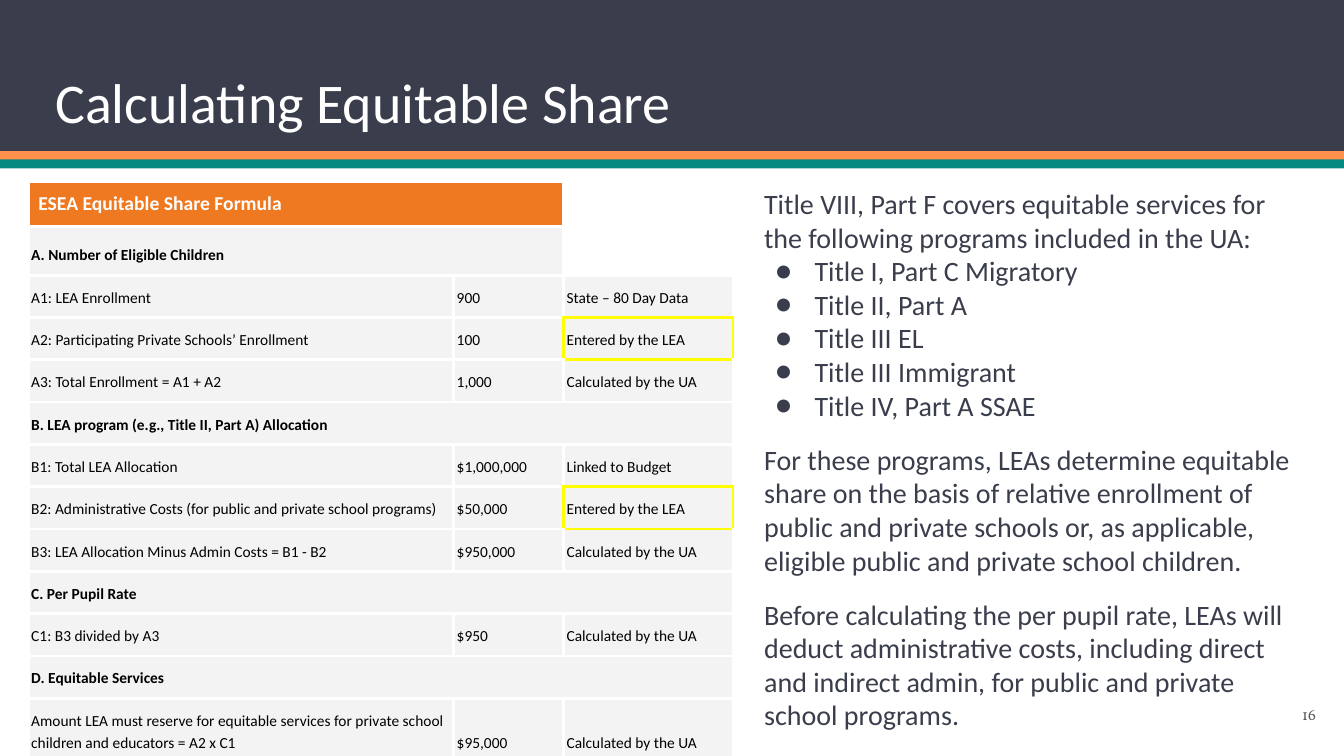
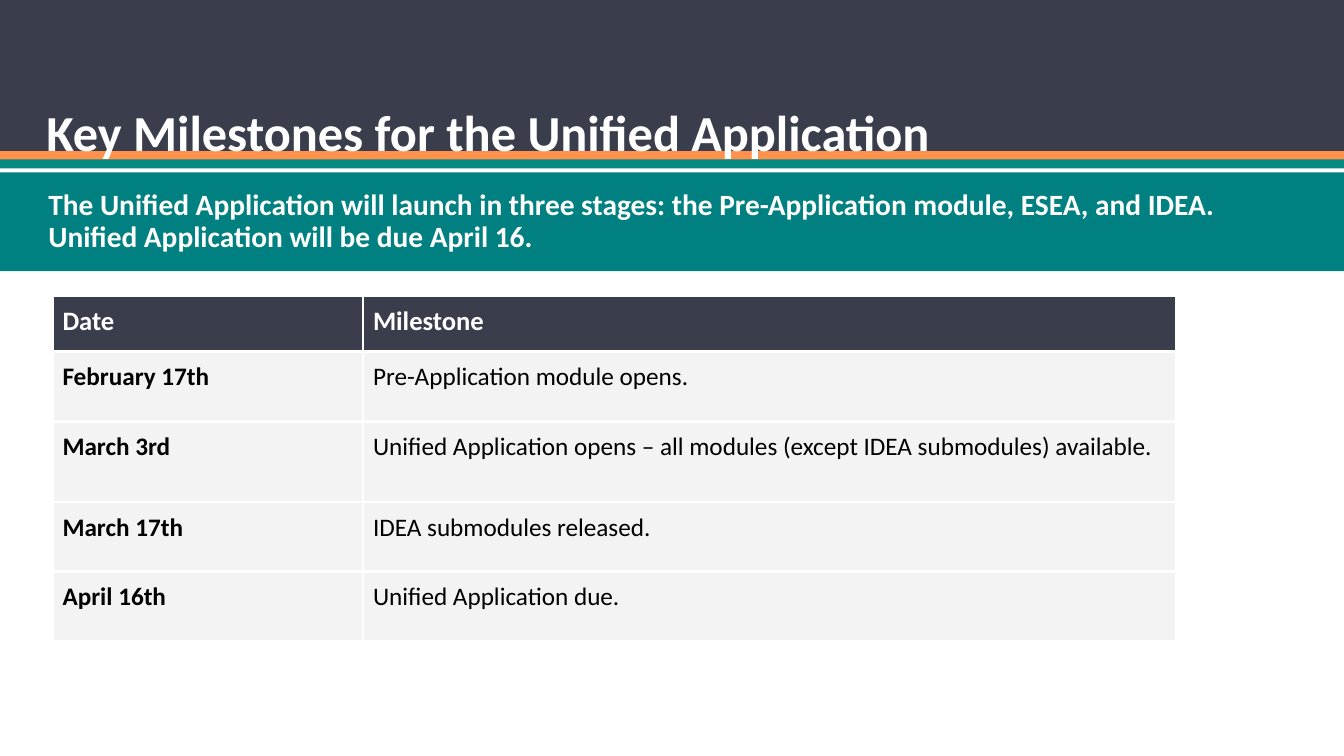
from dataclasses import dataclass

from lxml import etree
from pptx import Presentation
from pptx.dml.color import RGBColor
from pptx.enum import shapes, text
from pptx.oxml import ns
from pptx.util import Inches, Pt


@dataclass(frozen=True)
class Theme:
    font: str = "Calibri"
    number_font: str = "Vollkorn"
    white: str = "FFFFFF"
    black: str = "000000"
    navy: str = "3A3D4B"
    orange: str = "FF914D"
    green: str = "048A81"
    teal: str = "008080"
    header_orange: str = "EF7920"
    cell_gray: str = "F3F3F3"
    number_gray: str = "595959"
    yellow: str = "FFFF00"
    title: int = 40
    bold_title: int = 36
    banner: int = 21
    body: int = 20
    milestone_header: int = 19
    milestone: int = 18
    formula_header: int = 14
    formula: int = 11


THEME = Theme()
WIDTH, HEIGHT = 13.33, 7.5
# top, height, colour
BANDS = [(0, 1.5, THEME.navy), (1.5, 0.09, THEME.orange), (1.58, 0.09, THEME.green)]

ENTERED, CALCULATED = "Entered by the LEA", "Calculated by the UA"
FORMULA_TITLE = "ESEA Equitable Share Formula"
# A row with one text is a section heading.
FORMULA_ROWS = [
    ("A. Number of Eligible Children",),
    ("A1: LEA Enrollment", "900", "State – 80 Day Data"),
    ("A2: Participating Private Schools’ Enrollment", "100", ENTERED),
    ("A3: Total Enrollment = A1 + A2", "1,000", CALCULATED),
    ("B. LEA program (e.g., Title II, Part A) Allocation",),
    ("B1: Total LEA Allocation", "$1,000,000", "Linked to Budget"),
    ("B2: Administrative Costs (for public and private school programs)", "$50,000", ENTERED),
    ("B3: LEA Allocation Minus Admin Costs = B1 - B2", "$950,000", CALCULATED),
    ("C. Per Pupil Rate",),
    ("C1: B3 divided by A3", "$950", CALCULATED),
    ("D. Equitable Services",),
    ("Amount LEA must reserve for equitable services for private school "
     "children and educators = A2 x C1", "$95,000", CALCULATED),
]
PROGRAMS_INTRO = ("Title VIII, Part F covers equitable services for the following "
                  "programs included in the UA:")
PROGRAMS = ["Title I, Part C Migratory", "Title II, Part A", "Title III EL",
            "Title III Immigrant", "Title IV, Part A SSAE"]
EXPLANATIONS = [
    "For these programs, LEAs determine equitable share on the basis of relative enrollment "
    "of public and private schools or, as applicable, eligible public and private school children.",
    "Before calculating the per pupil rate, LEAs will deduct administrative costs, including "
    "direct and indirect admin, for public and private school programs.",
]
BANNER = ("The Unified Application will launch in three stages: the Pre-Application module, "
          "ESEA, and IDEA. Unified Application will be due April 16.")
MILESTONES = [
    ("Date", "Milestone"),
    ("February 17th", "Pre-Application module opens."),
    ("March 3rd", "Unified Application opens – all modules (except IDEA submodules) available."),
    ("March 17th", "IDEA submodules released."),
    ("April 16th", "Unified Application due."),
]


def set_all(target, **values):
    for name, value in values.items():
        setattr(target, name, value)


def set_margins(target, across, down):
    set_all(target, margin_left=Inches(across), margin_right=Inches(across),
            margin_top=Inches(down), margin_bottom=Inches(down))


def write(paragraph, words, size, color, bold=False, font=THEME.font, **layout):
    set_all(paragraph, **layout)
    run = paragraph.add_run()
    run.text = words
    set_all(run.font, size=Pt(size), bold=bold, name=font)
    run.font.color.rgb = RGBColor.from_string(color)


def add_box(slide, left, top, width, height, margin=0.1, anchor=text.MSO_ANCHOR.TOP):
    box = slide.shapes.add_textbox(*map(Inches, (left, top, width, height)))
    frame = box.text_frame
    set_all(frame, word_wrap=True, vertical_anchor=anchor)
    set_margins(frame, margin, margin)
    return frame


def add_band(slide, top, height, color):
    """Add a full-width rectangle."""
    band = slide.shapes.add_shape(shapes.MSO_SHAPE.RECTANGLE, 0, Inches(top),
                                  Inches(WIDTH), Inches(height))
    band.shadow.inherit = False
    band.fill.solid()
    band.fill.fore_color.rgb = RGBColor.from_string(color)
    band.line.fill.background()
    return band


def add_slide(presentation):
    slide = presentation.slides.add_slide(presentation.slide_layouts[6])
    for band in BANDS:
        add_band(slide, *band)
    return slide


def add_title(slide, words, left, top, size, spacing, margin=0.1, bold=False):
    frame = add_box(slide, left, top, 12.42, 0.83, margin)
    write(frame.paragraphs[0], words, size, THEME.white, bold, line_spacing=spacing)


def add_bullet(paragraph, indent, hanging):
    properties = paragraph._p.get_or_add_pPr()
    properties.set("marL", str(Inches(indent)))
    properties.set("indent", str(-Inches(hanging)))
    color = etree.SubElement(properties, ns.qn("a:buClr"))
    etree.SubElement(color, ns.qn("a:srgbClr"), val=THEME.navy)
    etree.SubElement(properties, ns.qn("a:buFont"), typeface=THEME.font)
    etree.SubElement(properties, ns.qn("a:buChar"), char="●")


def set_border(cell, position, side, color, width=2.25):
    """Insert one border line before the fill of the cell."""
    line = etree.Element(ns.qn("a:ln" + side), w=str(Pt(width)))
    fill = etree.SubElement(line, ns.qn("a:solidFill"))
    etree.SubElement(fill, ns.qn("a:srgbClr"), val=color)
    cell._tc.get_or_add_tcPr().insert(position, line)


def add_table(slide, left, top, widths, heights, header_fill, highlights=()):
    """Add a gray table with white rules and yellow boxes round the highlighted cells."""
    frame = slide.shapes.add_table(len(heights), len(widths), Inches(left), Inches(top),
                                   Inches(sum(widths)), Inches(sum(heights)))
    table = frame.table
    set_all(table, first_row=False, horz_banding=False)
    for column, width in zip(table.columns, widths):
        column.width = Inches(width)
    for row, height in zip(table.rows, heights):
        row.height = Inches(height)
    neighbours = {"L": (0, -1), "R": (0, 1), "T": (-1, 0), "B": (1, 0)}
    for r in range(len(heights)):
        for c in range(len(widths)):
            cell = table.cell(r, c)
            cell.fill.solid()
            cell.fill.fore_color.rgb = RGBColor.from_string(
                THEME.cell_gray if r else header_fill)
            for position, (side, (down, across)) in enumerate(neighbours.items()):
                boxed = {(r, c), (r + down, c + across)} & set(highlights)
                set_border(cell, position, side, THEME.yellow if boxed else THEME.white)
    return table


def fill_cell(cell, words, size, color, bold, across=0.1, anchor=text.MSO_ANCHOR.TOP, **layout):
    set_margins(cell, across, 0.1)
    cell.vertical_anchor = anchor
    write(cell.text_frame.paragraphs[0], words, size, color, bold, **layout)


def add_formula_table(slide):
    heights = [0.45, 0.48] + [0.42] * 10 + [0.64]
    highlights = [(r, 2) for r, row in enumerate(FORMULA_ROWS, 1) if row[-1] == ENTERED]
    table = add_table(slide, 0.28, 1.8, (4.22, 1.09, 1.68), heights,
                      THEME.header_orange, highlights)
    table.cell(0, 0).merge(table.cell(0, 1))
    corner = table.cell(0, 2)
    corner.merge(table.cell(1, 2))
    corner.fill.fore_color.rgb = RGBColor.from_string(THEME.white)
    fill_cell(table.cell(0, 0), FORMULA_TITLE, THEME.formula_header, THEME.white, True)
    for r, row in enumerate(FORMULA_ROWS, 1):
        heading = len(row) == 1
        if heading:
            table.cell(r, 0).merge(table.cell(r, 1 if r == 1 else 2))
        for c, words in enumerate(row):
            fill_cell(table.cell(r, c), words, THEME.formula, THEME.black, heading, 0.03,
                      text.MSO_ANCHOR.BOTTOM, line_spacing=1.15)


def add_explanation(slide):
    frame = add_box(slide, 7.48, 1.75, 5.49, 4.07)
    write(frame.paragraphs[0], PROGRAMS_INTRO, THEME.body, THEME.navy)
    for program in PROGRAMS:
        paragraph = frame.add_paragraph()
        write(paragraph, program, THEME.body, THEME.navy)
        add_bullet(paragraph, 0.5, 0.39)
    for words in EXPLANATIONS:
        write(frame.add_paragraph(), words, THEME.body, THEME.navy, space_before=Pt(14.6))


def build_share_slide(presentation):
    slide = add_slide(presentation)
    add_title(slide, "Calculating Equitable Share", 0.45, 0.65, THEME.title, 0.9)
    number = add_box(slide, 12.35, 6.8, 0.8, 0.57, anchor=text.MSO_ANCHOR.MIDDLE)
    write(number.paragraphs[0], "16", THEME.formula, THEME.number_gray,
          font=THEME.number_font, alignment=text.PP_ALIGN.RIGHT)
    add_formula_table(slide)
    add_explanation(slide)


def build_milestone_slide(presentation):
    slide = add_slide(presentation)
    add_title(slide, "Key Milestones for the Unified Application", 0.33, 0.63,
              THEME.bold_title, 1.4, 0.13, True)
    frame = add_band(slide, 1.71, 0.98, THEME.teal).text_frame
    set_all(frame, word_wrap=True, vertical_anchor=text.MSO_ANCHOR.MIDDLE)
    set_margins(frame, 0.48, 0.1)
    write(frame.paragraphs[0], BANNER, THEME.banner, THEME.white, True,
          alignment=text.PP_ALIGN.LEFT, line_spacing=0.9)
    table = add_table(slide, 0.52, 2.93, (3.08, 8.07), (0.56, 0.69, 0.8, 0.69, 0.69),
                      THEME.navy)
    for r, row in enumerate(MILESTONES):
        size, color = ((THEME.milestone, THEME.black) if r
                       else (THEME.milestone_header, THEME.white))
        for c, words in enumerate(row):
            fill_cell(table.cell(r, c), words, size, color, r == 0 or c == 0)


def main():
    presentation = Presentation()
    set_all(presentation, slide_width=Inches(WIDTH), slide_height=Inches(HEIGHT))
    build_share_slide(presentation)
    build_milestone_slide(presentation)
    presentation.save("out.pptx")


if __name__ == "__main__":
    main()
